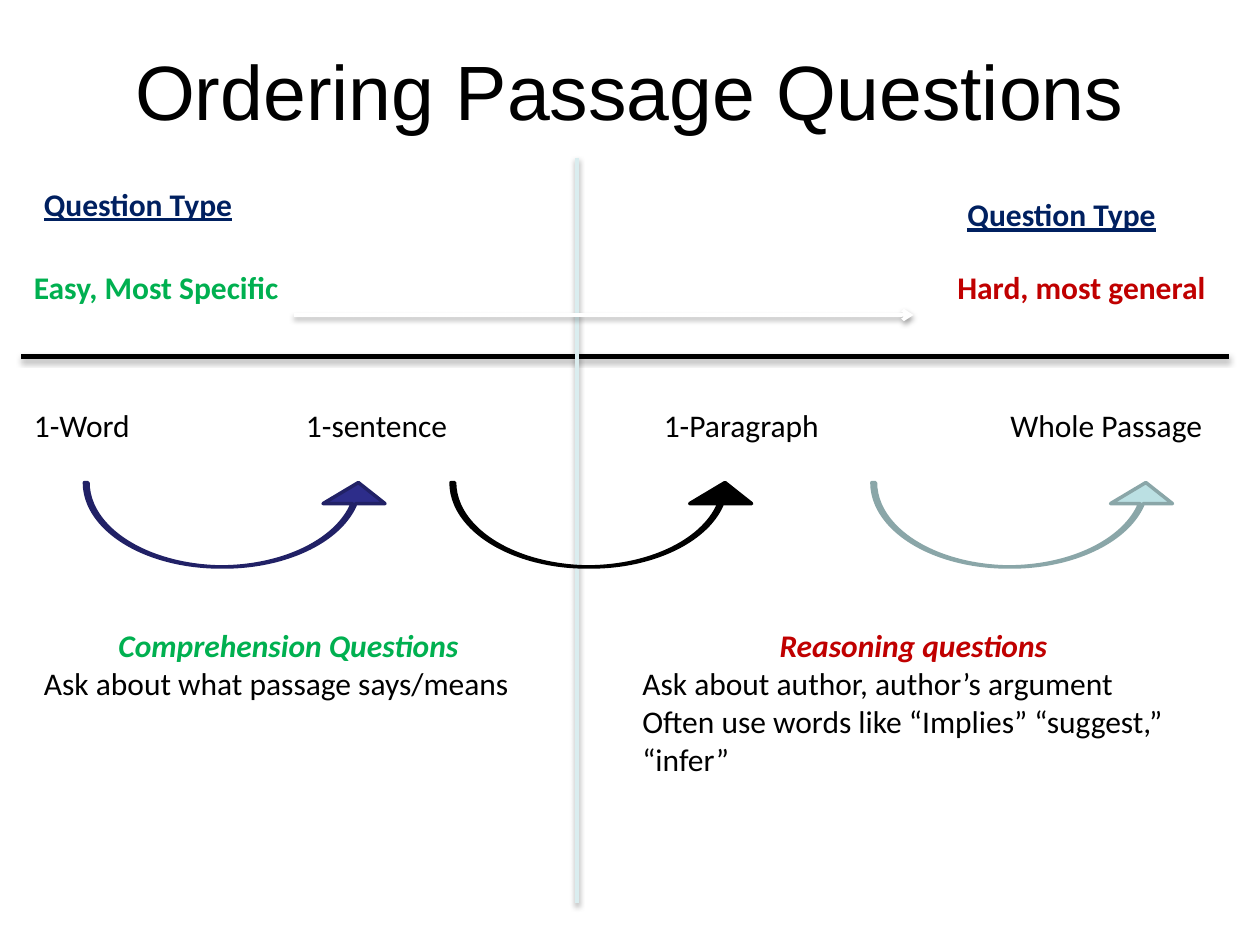
from dataclasses import dataclass

from lxml.etree import SubElement
from pptx import Presentation
from pptx.dml.color import RGBColor
from pptx.enum.shapes import MSO_CONNECTOR, MSO_SHAPE
from pptx.enum.text import MSO_ANCHOR, MSO_AUTO_SIZE, PP_ALIGN
from pptx.oxml.ns import qn
from pptx.slide import Slide
from pptx.util import Inches, Pt

BLACK = RGBColor(0x00, 0x00, 0x00)
WHITE = RGBColor(0xFF, 0xFF, 0xFF)
GREEN = RGBColor(0x00, 0xB0, 0x50)
RED = RGBColor(0xC0, 0x00, 0x00)
NAVY = RGBColor(0x00, 0x20, 0x60)
BLUE = RGBColor(0x2D, 0x2D, 0x8A)
INDIGO = RGBColor(0x21, 0x21, 0x66)
AQUA = RGBColor(0xBB, 0xE0, 0xE3)
TEAL = RGBColor(0x8A, 0xA6, 0xA8)
PALE = RGBColor(0xDA, 0xED, 0xEF)


@dataclass
class Para:
    text: str
    color: RGBColor = BLACK
    bold: bool = False
    italic: bool = False
    under: bool = False
    center: bool = False
    size: float = 18
    font: str = "Calibri"


@dataclass
class Box:
    left: float
    top: float
    width: float
    height: float
    paras: list[Para]
    grow: bool = True


@dataclass
class Rule:
    start: tuple[float, float]
    end: tuple[float, float]
    color: RGBColor
    weight: float
    alpha: int = 38
    drop: float = 1.6
    arrow: bool = False


@dataclass
class Curve:
    left: float
    fill: RGBColor
    edge: RGBColor


def label(left: float, top: float, width: float, text: str,
          color: RGBColor = BLACK, bold: bool = False, under: bool = False) -> Box:
    return Box(left, top, width, 0.4, [Para(text, color, bold, under=under)])


def heading(text: str, color: RGBColor) -> Para:
    return Para(text, color, bold=True, italic=True, center=True)


TITLE = Box(0.5, 0.17, 9, 1.08, [
    Para("Ordering Passage Questions", center=True, size=44, font="Arial")], grow=False)

BOXES = [
    label(0.17, 2.08, 2.33, "Easy, Most Specific", GREEN, True),
    label(7.5, 2.08, 2.17, "Hard, most general", RED, True),
    label(0.17, 3.17, 1.08, "1-Word"),
    label(2.33, 3.17, 1.67, "1-sentence"),
    label(5.17, 3.17, 1.83, "1-Paragraph"),
    label(7.92, 3.17, 1.75, "Whole Passage"),
    Box(0.25, 4.92, 4.08, 1.01, [
        heading("Comprehension Questions", GREEN),
        Para("Ask about what passage says/means")]),
    Box(5, 4.92, 4.5, 1.31, [
        heading("Reasoning questions", RED),
        Para("Ask about author, author’s argument"),
        Para("Often use words like “Implies” “suggest,” “infer”")]),
    label(0.25, 1.42, 2.08, "Question Type", NAVY, True, True),
    label(7.58, 1.5, 2.08, "Question Type", NAVY, True, True),
]

RULES = [
    Rule((0.17, 2.83), (9.75, 2.83), BLACK, 3, alpha=35, drop=1.8),
    Rule((4.58, 1.25), (4.58, 7.17), PALE, 2),
    Rule((2.33, 2.5), (7.25, 2.5), WHITE, 2, arrow=True),
]

CURVES = [
    Curve(0.67, BLUE, INDIGO),
    Curve(3.58, BLACK, BLACK),
    Curve(6.92, AQUA, TEAL),
]


def add_text(slide: Slide, box: Box) -> None:
    shape = slide.shapes.add_textbox(
        Inches(box.left), Inches(box.top), Inches(box.width), Inches(box.height))
    frame = shape.text_frame
    frame.word_wrap = True
    if box.grow:
        frame.auto_size = MSO_AUTO_SIZE.SHAPE_TO_FIT_TEXT
    else:
        frame.vertical_anchor = MSO_ANCHOR.MIDDLE
    for index, item in enumerate(box.paras):
        para = frame.add_paragraph() if index else frame.paragraphs[0]
        para.alignment = PP_ALIGN.CENTER if item.center else PP_ALIGN.LEFT
        run = para.add_run()
        run.text = item.text
        font = run.font
        font.name = item.font
        font.size = Pt(item.size)
        font.bold = item.bold
        font.italic = item.italic
        font.underline = item.under
        font.color.rgb = item.color


def add_rule(slide: Slide, rule: Rule) -> None:
    line = slide.shapes.add_connector(
        MSO_CONNECTOR.STRAIGHT, *map(Inches, rule.start + rule.end))
    line.line.color.rgb = rule.color
    line.line.width = Pt(rule.weight)
    if rule.arrow:
        SubElement(line.line._get_or_add_ln(), qn("a:tailEnd"), type="arrow")
    effects = SubElement(line._element.spPr, qn("a:effectLst"))
    shadow = SubElement(
        effects, qn("a:outerShdw"), blurRad=str(Pt(3.1)), dist=str(Pt(rule.drop)),
        dir="5400000", rotWithShape="0")
    tint = SubElement(shadow, qn("a:srgbClr"), val=str(BLACK))
    SubElement(tint, qn("a:alpha"), val=str(rule.alpha * 1000))


def add_curve(slide: Slide, curve: Curve) -> None:
    shape = slide.shapes.add_shape(
        MSO_SHAPE.CURVED_UP_ARROW,
        Inches(curve.left), Inches(3.83), Inches(2.42), Inches(0.67))
    for index, value in enumerate((0.042, 0.734, 0.25)):
        shape.adjustments[index] = value
    shape.shadow.inherit = False
    shape.fill.solid()
    shape.fill.fore_color.rgb = curve.fill
    shape.line.color.rgb = curve.edge
    shape.line.width = Pt(2)


def main() -> None:
    deck = Presentation()
    deck.slide_width = Inches(10)
    deck.slide_height = Inches(7.5)
    slide = deck.slides.add_slide(deck.slide_layouts[6])
    add_text(slide, TITLE)
    for rule in RULES:
        add_rule(slide, rule)
    for box in BOXES:
        add_text(slide, box)
    for curve in CURVES:
        add_curve(slide, curve)
    deck.save("out.pptx")


if __name__ == "__main__":
    main()
